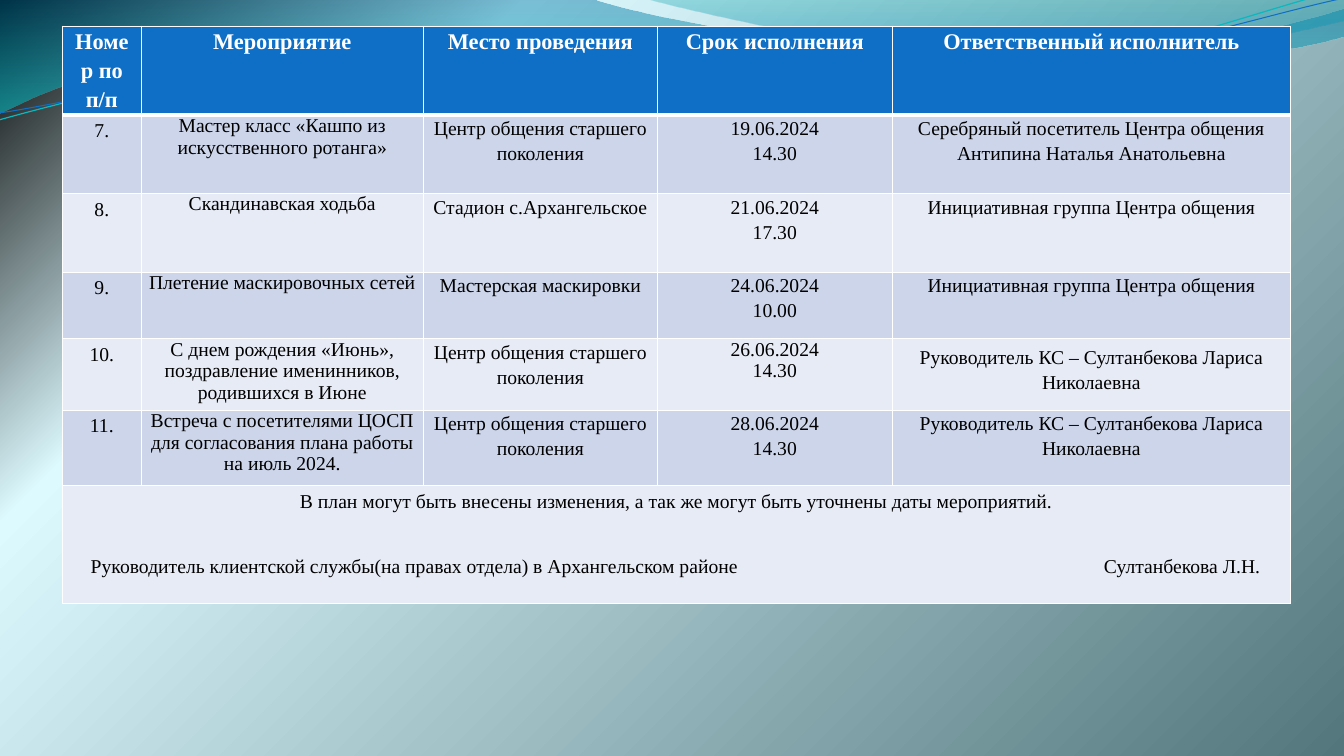
"""Build the slide with the June plan of events."""
from math import cos, radians, sin
from lxml.etree import SubElement
from pptx import Presentation
from pptx.dml.color import RGBColor
from pptx.enum.text import PP_ALIGN
from pptx.oxml import parse_xml
from pptx.oxml.ns import nsdecls, qn
from pptx.util import Inches, Pt

BLACK = RGBColor(0x00, 0x00, 0x00)
WHITE = RGBColor(0xFF, 0xFF, 0xFF)
ICE = RGBColor(0xDD, 0xFA, 0xFF)
SLATE = RGBColor(0x52, 0x76, 0x7C)
BLUE = RGBColor(0x0F, 0x6F, 0xC6)
DEEP_BLUE = RGBColor(0x00, 0x74, 0xA1)
SEA_BLUE = RGBColor(0x00, 0x8B, 0xBF)
TEAL = RGBColor(0x00, 0xA1, 0xA9)
TURQUOISE = RGBColor(0x00, 0xC6, 0xCF)
CYAN = RGBColor(0x0A, 0xB8, 0xBF)
BAND_DARK = RGBColor(0xCC, 0xD5, 0xEA)
BAND_LIGHT = RGBColor(0xE7, 0xEB, 0xF5)

FONT = "Times New Roman"
CURVE_TILT = 357.3
COLUMN_WIDTHS = [0.78, 2.8, 2.32, 2.33, 3.95]
ROW_HEIGHTS = [0.88, 0.78, 0.78, 0.66, 0.71, 0.75, 1.17]

HEADERS = ["Номер по п/п", "Мероприятие", "Место проведения",
           "Срок исполнения", "Ответственный исполнитель"]
CENTRE = "Центр общения старшего поколения"
GROUP = "Инициативная группа Центра общения"
LEADER = "Руководитель КС – Султанбекова Лариса Николаевна"
EVENTS = [
    ["7.", "Мастер класс «Кашпо из искусственного ротанга»", CENTRE, "19.06.2024\n14.30",
     "Серебряный посетитель Центра общения\nАнтипина Наталья Анатольевна"],
    ["8.", "Скандинавская ходьба", "Стадион с.Архангельское", "21.06.2024\n17.30", GROUP],
    ["9.", "Плетение маскировочных сетей", "Мастерская маскировки", "24.06.2024\n10.00", GROUP],
    ["10.", "С днем рождения «Июнь», поздравление именинников, родившихся в Июне",
     CENTRE, "26.06.2024\n14.30", LEADER],
    ["11.", "Встреча с посетителями ЦОСП для согласования плана работы на июль 2024.",
     CENTRE, "28.06.2024\n14.30", LEADER],
]
FOOTER = ("В план могут быть внесены изменения, а так же могут быть уточнены даты мероприятий.\n"
          "Руководитель клиентской службы(на правах отдела) в Архангельском районе\tСултанбекова Л.Н.")

WIDE_WAVE = [
    (0, 0), (5.87, -0.01), (6.34, 0.17, 8.85, 0.63, 10.11, 0.63),
    (11.38, 0.63, 12.78, 0.26, 13.33, 0.09), (13.35, 0.36),
    (13.11, 0.44, 11.6, 0.76, 9.94, 0.75), (8.29, 0.75, 5.09, 0.28, 3.43, 0.34),
    (1.72, 0.36, 0.61, 0.83, -0.01, 1.13)]
RIGHT_WAVE = [
    (6.39, -0.01), (6.79, 0.11, 9.09, 0.62, 10.25, 0.65),
    (11.41, 0.69, 12.82, 0.32, 13.33, 0.21), (13.33, 0)]
CYAN_CURVE = [
    (-0.01, 1.19), (0.64, 1.01, 2.11, 0.62, 3.69, 0.55),
    (5.27, 0.48, 7.9, 0.87, 9.5, 0.76), (11.1, 0.66, 12.52, 0.08, 13.31, -0.1)]
BLUE_CURVE = [
    (0, 1.12), (0.63, 1.03, 2.18, 0.66, 3.78, 0.59),
    (5.37, 0.53, 7.96, 0.82, 9.55, 0.72), (11.15, 0.62, 12.55, 0.14, 13.34, -0.02)]


def set_gradient(fill_owner, fill, stops, direction):
    """Give a fill gradient stops of (position, colour, opacity)."""
    fill.gradient()
    gradient = fill_owner.find(".//" + qn("a:gradFill"))
    stop_xml = "".join(
        f'<a:gs pos="{position * 1000}"><a:srgbClr val="{color}">'
        f'<a:alpha val="{opacity * 1000}"/></a:srgbClr></a:gs>'
        for position, color, opacity in stops)
    gradient.getparent().replace(gradient, parse_xml(
        f'<a:gradFill {nsdecls("a")} rotWithShape="1"><a:gsLst>{stop_xml}</a:gsLst>'
        f'{direction}</a:gradFill>'))


def set_background(slide):
    """Spread a round gradient from the top left corner."""
    stops = [(0, BLACK, 100), (25, ICE, 100), (100, SLATE, 100)]
    fill = slide.background.fill
    set_gradient(slide.element, fill, stops,
                 '<a:path path="circle"><a:fillToRect l="0" t="0" r="100000" b="100000"/></a:path>')


def pair_points(segment):
    """Split a flat segment into (x, y) pairs."""
    return list(zip(segment[::2], segment[1::2]))


def turn_segment(segment, center, degrees):
    """Turn the points of a segment clockwise about a center."""
    angle = radians(degrees)
    turned = []
    for x, y in pair_points(segment):
        across, down = x - center[0], y - center[1]
        turned += [center[0] + across * cos(angle) - down * sin(angle),
                   center[1] + across * sin(angle) + down * cos(angle)]
    return turned


def add_outline(slide, segments, close):
    """Add a freeform of straight and cubic segments."""
    points = [(Inches(x), Inches(y)) for segment in segments for x, y in pair_points(segment)]
    builder = slide.shapes.build_freeform(*points[0])
    builder.add_line_segments(points[1:], close=close)
    shape = builder.convert_to_shape()
    shape.shadow.inherit = False
    lines = iter(list(shape.element.iter(qn("a:lnTo"))))
    for segment in segments[1:]:
        group = [next(lines) for _ in pair_points(segment)]
        if len(group) == 3:
            cubic = parse_xml(f'<a:cubicBezTo {nsdecls("a")}/>')
            group[0].addprevious(cubic)
            for line in group:
                cubic.append(line[0])
                line.getparent().remove(line)
    return shape


def add_wave(slide, segments, stops):
    """Add a translucent wave shaded from top to bottom."""
    shape = add_outline(slide, segments, True)
    shape.line.fill.background()
    set_gradient(shape.element, shape.fill, stops, '<a:lin ang="5400000" scaled="0"/>')


def add_curve(slide, segments, center, color, width):
    """Add a thin tilted open curve."""
    level = [turn_segment(segment, center, 360 - CURVE_TILT) for segment in segments]
    shape = add_outline(slide, level, False)
    shape.rotation = CURVE_TILT
    shape.fill.background()
    shape.line.color.rgb = color
    shape.line.width = Pt(width)


def set_borders(cell, top, bottom):
    """Draw white cell borders, with top and bottom widths in points."""
    properties = cell._tc.get_or_add_tcPr()
    for index, (side, width) in enumerate([("L", 1), ("R", 1), ("T", top), ("B", bottom)]):
        properties.insert(index, parse_xml(
            f'<a:ln{side} {nsdecls("a")} w="{Pt(width)}"><a:solidFill>'
            f'<a:srgbClr val="{WHITE}"/></a:solidFill></a:ln{side}>'))


def fill_cell(cell, text, fill, spacing=1.15, inset=(0.07, 0), header=False):
    """Write centred text into a cell and colour it."""
    cell.text_frame.text = text
    cell.fill.solid()
    cell.fill.fore_color.rgb = fill
    cell.margin_left = cell.margin_right = Inches(inset[0])
    cell.margin_top = cell.margin_bottom = Inches(inset[1])
    for paragraph in cell.text_frame.paragraphs:
        paragraph.alignment = PP_ALIGN.CENTER
        paragraph.line_spacing = spacing
        for run in paragraph.runs:
            run.font.name = FONT
            run.font.size = Pt(16 if header else 14)
            run.font.bold = header
            run.font.color.rgb = WHITE if header else BLACK


def fill_footer(table):
    """Fill the merged last row with the note and the signature line."""
    last = len(ROW_HEIGHTS) - 1
    cell = table.cell(last, 0)
    cell.merge(table.cell(last, len(COLUMN_WIDTHS) - 1))
    fill_cell(cell, FOOTER, BAND_LIGHT, 1.0, (0.28, 0.05))
    signature = cell.text_frame.paragraphs[1]
    signature.alignment = PP_ALIGN.LEFT
    signature.space_before = Pt(31)
    tabs = SubElement(signature._p.get_or_add_pPr(), qn("a:tabLst"))
    SubElement(tabs, qn("a:tab"), pos=str(Inches(11.6)), algn="r")


def add_plan_table(slide):
    """Add the table of events."""
    frame = slide.shapes.add_table(
        len(ROW_HEIGHTS), len(COLUMN_WIDTHS), Inches(0.62), Inches(0.26),
        Inches(sum(COLUMN_WIDTHS)), Inches(sum(ROW_HEIGHTS)))
    table = frame.table
    table.first_row = table.horz_banding = False
    for column, width in zip(table.columns, COLUMN_WIDTHS):
        column.width = Inches(width)
    for row, height in zip(table.rows, ROW_HEIGHTS):
        row.height = Inches(height)
    for index, header in enumerate(HEADERS):
        fill_cell(table.cell(0, index), header, BLUE, header=True)
    for row_index, event in enumerate(EVENTS, 1):
        fill = BAND_DARK if row_index % 2 else BAND_LIGHT
        birthday = event[0] == "10."
        for index, text in enumerate(event):
            single = index < 2 or (birthday and index == 3)
            padded = index == 0 or (birthday and index == 4)
            fill_cell(table.cell(row_index, index), text, fill, 1.0 if single else 1.15,
                      (0.1, 0.05) if padded else (0.07, 0))
    fill_footer(table)
    for row_index, row in enumerate(table.rows):
        for cell in row.cells:
            set_borders(cell, 3 if row_index == 1 else 1, 3 if row_index == 0 else 1)


def main():
    """Build and save the presentation."""
    presentation = Presentation()
    presentation.slide_width, presentation.slide_height = Inches(13.33), Inches(7.5)
    slide = presentation.slides.add_slide(presentation.slide_layouts[6])
    set_background(slide)
    add_wave(slide, WIDE_WAVE, [(0, DEEP_BLUE, 45), (100, TURQUOISE, 55)])
    add_wave(slide, RIGHT_WAVE, [(0, TEAL, 30), (80, SEA_BLUE, 45)])
    add_curve(slide, CYAN_CURVE, (6.65, 0.58), CYAN, 0.85)
    add_curve(slide, BLUE_CURVE, (6.67, 0.59), BLUE, 0.75)
    add_plan_table(slide)
    presentation.save("out.pptx")


if __name__ == "__main__":
    main()
